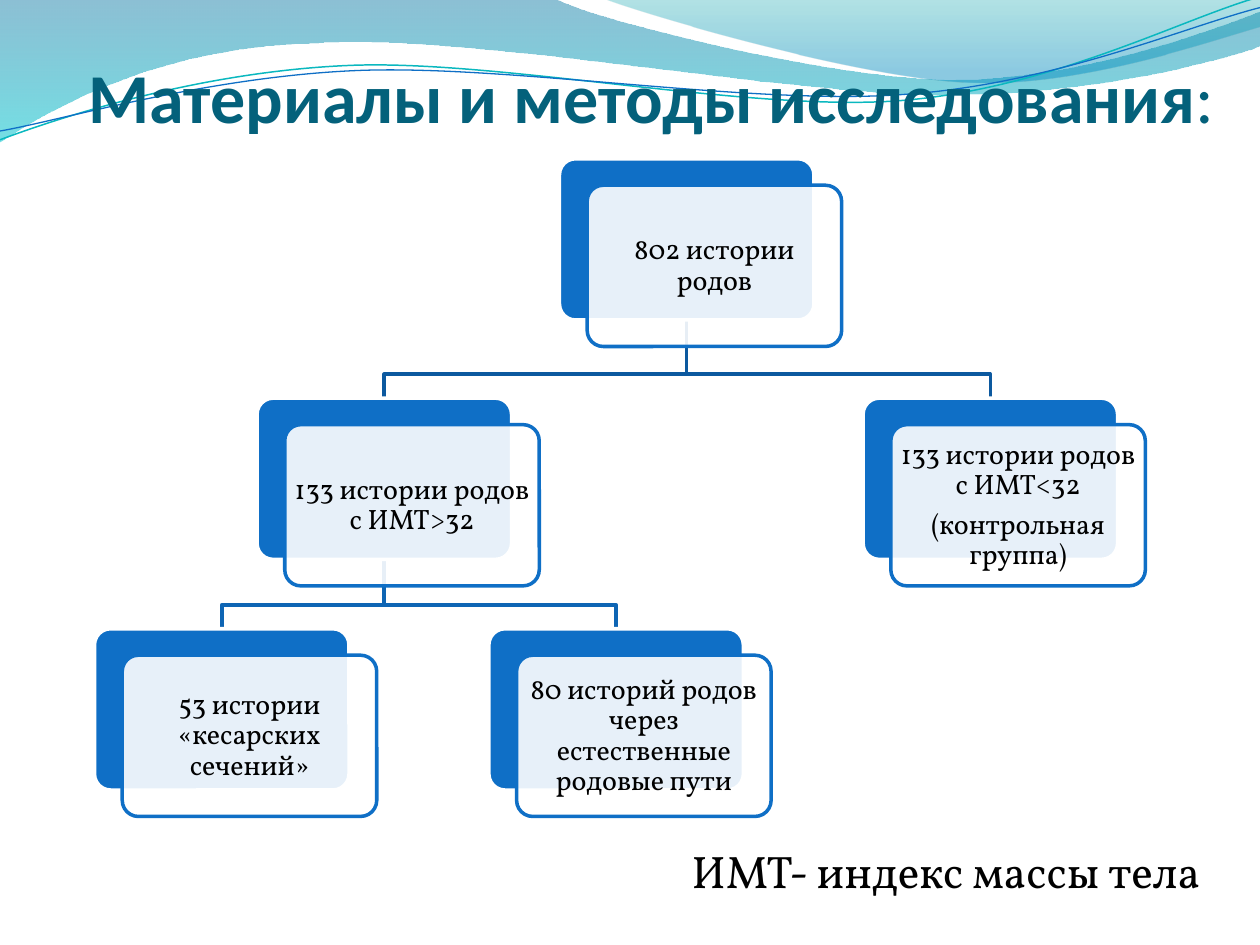
"""Build the study-materials slide: wave header, title, case tree and footnote."""
import dataclasses
import math

import lxml.etree
import pptx
import pptx.dml.color
import pptx.enum.shapes
import pptx.enum.text
import pptx.oxml.ns
import pptx.util

Inches, Pt, qn = pptx.util.Inches, pptx.util.Pt, pptx.oxml.ns.qn
ANCHOR, ALIGN = pptx.enum.text.MSO_ANCHOR, pptx.enum.text.PP_ALIGN


@dataclasses.dataclass(frozen=True)
class Theme:
    heading_font: str = "Calibri"
    body_font: str = "Vollkorn"
    title_size: float = 40
    card_size: float = 16
    note_size: float = 26
    title: str = "04617B"
    text: str = "000000"
    blue: str = "0F6FC6"
    teal: str = "0AB8BF"
    white: str = "FFFFFF"
    upper_link: str = "0C599F"
    lower_link: str = "0E65B4"
    rule: float = 2


THEME = Theme()

TITLE = [("Материалы и методы исследования", True), (":", False)]
NOTE = "ИМТ- индекс массы тела"

CARDS = {
    "all": (4.44, 1.26, ["802 истории родов"]),
    "high": (2.04, 3.16, ["133 истории родов с ИМТ>32"]),
    "caesarean": (0.75, 4.99, ["53 истории «кесарских сечений»"]),
    "natural": (3.88, 4.99, ["80 историй родов через естественные родовые пути"]),
    "control": (6.85, 3.16, ["133 истории родов с ИМТ<32", "(контрольная группа)"]),
}
LINKS = [
    ("all", "control", THEME.upper_link),
    ("high", "natural", THEME.lower_link),
    ("high", "caesarean", THEME.lower_link),
    ("all", "high", THEME.upper_link),
]
CARD_WIDTH, CARD_HEIGHT = 2.02, 1.28
FRONT_SHIFT = (0.22, 0.21)
BEND_GAP = 0.19

BANDS = [
    ((-0.01, -0.01, 10.02, 1.14),
     [(0, 0), (4.4, -0.01), (4.76, 0.17, 6.64, 0.63, 7.58, 0.63),
      (8.53, 0.63, 9.58, 0.26, 10, 0.09), (10.01, 0.36),
      (9.83, 0.44, 8.7, 0.76, 7.46, 0.75), (6.22, 0.75, 3.82, 0.28, 2.57, 0.34),
      (1.29, 0.36, 0.46, 0.83, -0.01, 1.13), (0, 0)],
     [(0, "0074A1", 45), (1, "00C6CF", 55)]),
    ((4.79, -0.01, 5.21, 0.7),
     [(4.79, -0.01), (5.09, 0.11, 6.82, 0.62, 7.69, 0.65),
      (8.56, 0.69, 9.61, 0.32, 10, 0.21), (10, 0), (4.79, -0.01)],
     [(0, "00A1A9", 30), (0.8, "008BBF", 45)]),
]
STRAND_TURN = 357.3
STRANDS = [
    ((-0.02, 0.22, 10.02, 0.71),
     [(0, 1.11), (0.48, 0.93, 1.58, 0.57, 2.77, 0.52),
      (3.95, 0.47, 5.93, 0.89, 7.13, 0.8), (8.33, 0.71, 9.38, 0.15, 9.98, -0.02)],
     THEME.teal, 0.85),
    ((-0.02, 0.3, 10.03, 0.58),
     [(0, 1.04), (0.47, 0.96, 1.64, 0.61, 2.83, 0.56),
      (4.03, 0.51, 5.97, 0.84, 7.17, 0.75), (8.36, 0.67, 9.41, 0.21, 10, 0.06)],
     THEME.blue, 0.75),
]


def rgb(value):
    return pptx.dml.color.RGBColor.from_string(value)


def pairs(segment):
    return list(zip(segment[::2], segment[1::2]))


def turned_back(point, frame, degrees):
    left, top, width, height = frame
    middle_x, middle_y = left + width / 2, top + height / 2
    angle = math.radians(-degrees)
    dx, dy = point[0] - middle_x, point[1] - middle_y
    return (middle_x + dx * math.cos(angle) - dy * math.sin(angle),
            middle_y + dx * math.sin(angle) + dy * math.cos(angle))


def add_outline(page, frame, outline, closed=False, turn=0):
    builder = page.shapes.build_freeform(*map(Inches, outline[0]), scale=1.0)
    ends = [tuple(map(Inches, segment[-2:])) for segment in outline[1:]]
    builder.add_line_segments(ends, close=closed)
    shape = builder.convert_to_shape()
    shape.left, shape.top, shape.width, shape.height = map(Inches, frame)
    shape.rotation = turn
    shape.shadow.inherit = False
    track = shape._element.find(".//" + qn("a:path"))
    track.set("w", str(shape.width))
    track.set("h", str(shape.height))
    for step, segment in zip(list(track), outline):
        if len(segment) == 6:
            curve = lxml.etree.Element(qn("a:cubicBezTo"))
            track.replace(step, curve)
            step = curve
        for point in list(step):
            step.remove(point)
        for pair in pairs(segment):
            x, y = turned_back(pair, frame, turn)
            point = lxml.etree.SubElement(step, qn("a:pt"))
            point.set("x", str(Inches(x) - shape.left))
            point.set("y", str(Inches(y) - shape.top))
    return shape


def set_line(shape, color, width):
    shape.line.color.rgb = rgb(color)
    shape.line.width = Pt(width)


def set_alphas(shape, percents):
    fill = shape._element.spPr
    for color, percent in zip(fill.iter(qn("a:srgbClr")), percents):
        lxml.etree.SubElement(color, qn("a:alpha")).set("val", str(percent * 1000))


def add_band(page, frame, outline, stops):
    band = add_outline(page, frame, outline, closed=True)
    band.fill.gradient()
    band.fill.gradient_angle = 270
    for stop, (position, color, _) in zip(band.fill.gradient_stops, stops):
        stop.position = position
        stop.color.rgb = rgb(color)
    set_alphas(band, [percent for _, _, percent in stops])
    band.line.fill.background()


def add_strand(page, frame, outline, color, width, turn=0):
    strand = add_outline(page, frame, outline, turn=turn)
    strand.fill.background()
    set_line(strand, color, width)


def add_link(page, parent, child, color):
    (parent_left, parent_top, _), (child_left, child_top, _) = CARDS[parent], CARDS[child]
    start, end = parent_left + CARD_WIDTH / 2, child_left + CARD_WIDTH / 2
    top, bend = parent_top + CARD_HEIGHT, child_top - BEND_GAP
    frame = (min(start, end), top, abs(end - start), child_top - top)
    corners = [(start, top), (start, bend), (end, bend), (end, child_top)]
    add_strand(page, frame, corners, color, THEME.rule)


def add_text(page, area, margins, anchor, lines, font, size, color):
    box = page.shapes.add_textbox(*map(Inches, area))
    frame = box.text_frame
    frame.word_wrap = True
    frame.vertical_anchor = anchor
    frame.margin_left, frame.margin_top, frame.margin_right, frame.margin_bottom = map(Inches, margins)
    for index, spans in enumerate(lines):
        para = frame.add_paragraph() if index else frame.paragraphs[0]
        for text, bold in spans:
            span = para.add_run()
            span.text = text
            span.font.name, span.font.size, span.font.bold = font, Pt(size), bold
            span.font.color.rgb = rgb(color)
    return frame.paragraphs


def add_plate(page, area, fill, line):
    plate = page.shapes.add_shape(pptx.enum.shapes.MSO_SHAPE.ROUNDED_RECTANGLE, *map(Inches, area))
    plate.adjustments[0] = 0.1
    plate.shadow.inherit = False
    plate.fill.solid()
    plate.fill.fore_color.rgb = rgb(fill)
    set_line(plate, line, THEME.rule)
    return plate


def add_card(page, left, top, lines):
    front = (left + FRONT_SHIFT[0], top + FRONT_SHIFT[1], CARD_WIDTH, CARD_HEIGHT)
    add_plate(page, (left, top, CARD_WIDTH, CARD_HEIGHT), THEME.blue, THEME.white)
    set_alphas(add_plate(page, front, THEME.white, THEME.blue), [90])
    for para in add_text(page, front, [0.07] * 4, ANCHOR.MIDDLE, [[(line, False)] for line in lines],
                         THEME.body_font, THEME.card_size, THEME.text):
        para.alignment = ALIGN.CENTER
        para.line_spacing = 0.9
        para.space_after = Pt(0.35 * THEME.card_size)


def main():
    deck = pptx.Presentation()
    deck.slide_width, deck.slide_height = Inches(10), Inches(7.5)
    page = deck.slides.add_slide(deck.slide_layouts[6])
    for band in BANDS:
        add_band(page, *band)
    for strand in STRANDS:
        add_strand(page, *strand, turn=STRAND_TURN)
    add_text(page, (0.7, -0.16, 9, 1.25), (0, 0.05, 0, 0), ANCHOR.BOTTOM, [TITLE],
             THEME.heading_font, THEME.title_size, THEME.title)
    for link in LINKS:
        add_link(page, *link)
    for card in CARDS.values():
        add_card(page, *card)
    add_text(page, (5.39, 6.64, 4.42, 0.54), (0.1, 0.05, 0.1, 0.05), ANCHOR.TOP, [[(NOTE, False)]],
             THEME.body_font, THEME.note_size, THEME.text)
    deck.save("out.pptx")


if __name__ == "__main__":
    main()
